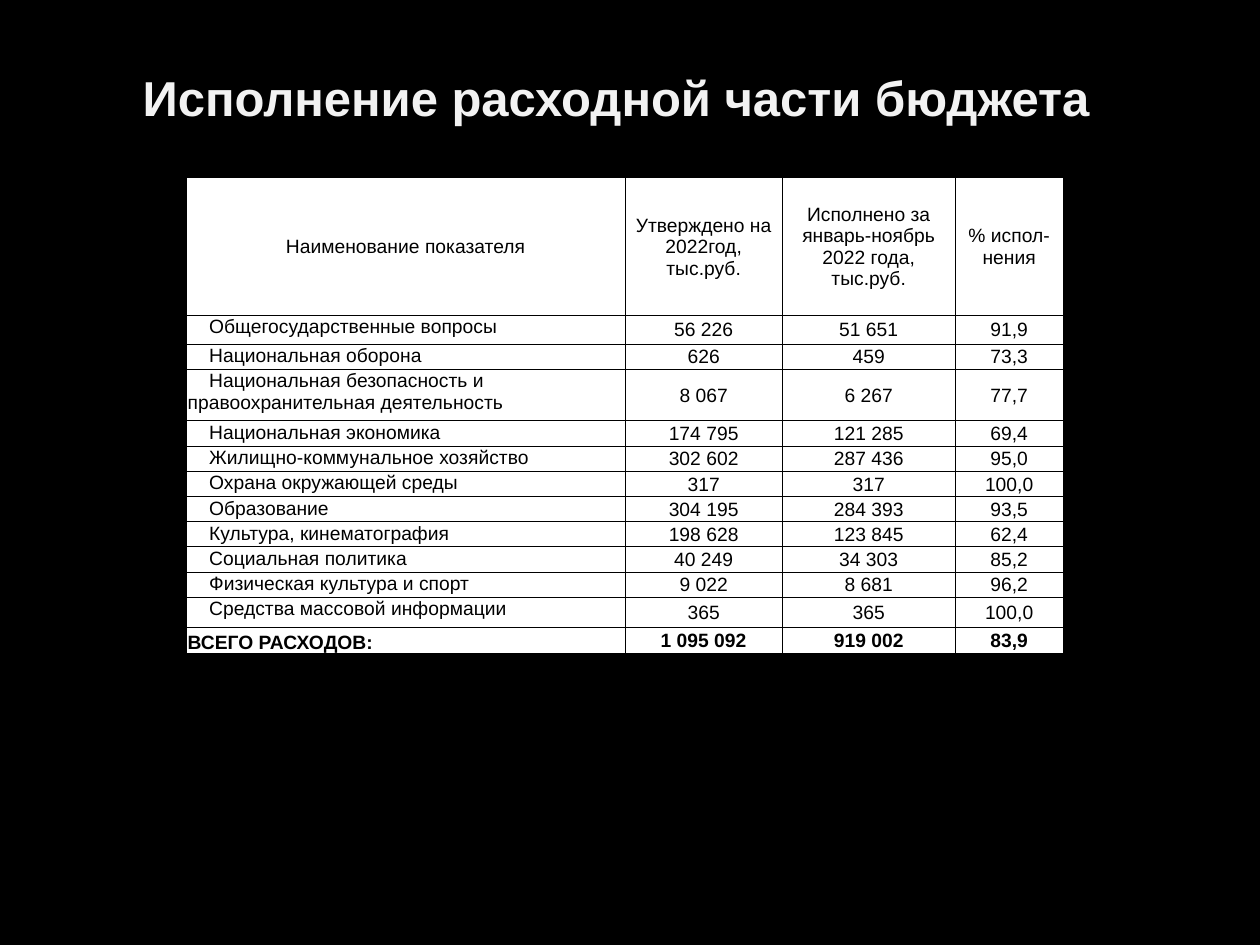
from lxml import etree
from pptx import Presentation
from pptx.dml.color import RGBColor
from pptx.enum import text
from pptx.oxml import ns
from pptx.util import Inches, Pt

BLACK = RGBColor(0x00, 0x00, 0x00)
WHITE = RGBColor(0xFF, 0xFF, 0xFF)
LIGHT_GRAY = RGBColor(0xF2, 0xF2, 0xF2)

COLUMN_WIDTHS = [3.48, 1.25, 1.37, 0.86]
ROW_HEIGHTS = [1.09, 0.23, 0.2, 0.41] + [0.2] * 7 + [0.24, 0.21]
ROWS = [
    ("Наименование показателя", "Утверждено на 2022год, тыс.руб.",
     "Исполнено за январь-ноябрь 2022 года, тыс.руб.", "% испол-нения"),
    ("Общегосударственные вопросы", "56 226", "51 651", "91,9"),
    ("Национальная оборона", "626", "459", "73,3"),
    ("Национальная безопасность и правоохранительная деятельность",
     "8 067", "6 267", "77,7"),
    ("Национальная экономика", "174 795", "121 285", "69,4"),
    ("Жилищно-коммунальное хозяйство", "302 602", "287 436", "95,0"),
    ("Охрана окружающей среды", "317", "317", "100,0"),
    ("Образование", "304 195", "284 393", "93,5"),
    ("Культура, кинематография", "198 628", "123 845", "62,4"),
    ("Социальная политика", "40 249", "34 303", "85,2"),
    ("Физическая культура и спорт", "9 022", "8 681", "96,2"),
    ("Средства массовой информации", "365", "365", "100,0"),
    ("ВСЕГО РАСХОДОВ:", "1 095 092", "919 002", "83,9"),
]


def style_paragraph(paragraph, size, color, bold, alignment):
    paragraph.font.name = "Arial"
    paragraph.font.size = Pt(size)
    paragraph.font.color.rgb = color
    paragraph.font.bold = bold
    paragraph.alignment = alignment


def add_borders(cell):
    properties = cell._tc.get_or_add_tcPr()
    for position, side in enumerate(("lnL", "lnR", "lnT", "lnB")):
        line = etree.Element(ns.qn(f"a:{side}"), w=str(Pt(0.5)))
        fill = etree.SubElement(line, ns.qn("a:solidFill"))
        etree.SubElement(fill, ns.qn("a:srgbClr"), val=str(BLACK))
        properties.insert(position, line)


presentation = Presentation()
presentation.slide_width = Inches(10)
presentation.slide_height = Inches(7.5)
slide = presentation.slides.add_slide(presentation.slide_layouts[6])
slide.background.fill.solid()
slide.background.fill.fore_color.rgb = BLACK

title = slide.shapes.add_textbox(Inches(0.5), Inches(0.29), Inches(9), Inches(0.96))
title_frame = title.text_frame
title_frame.word_wrap = True
title_frame.vertical_anchor = text.MSO_ANCHOR.MIDDLE
title_frame.margin_right = Inches(0.32)
title_frame.text = "Исполнение расходной части бюджета"
style_paragraph(title_frame.paragraphs[0], 28, LIGHT_GRAY, True, text.PP_ALIGN.CENTER)

table = slide.shapes.add_table(
    len(ROWS), len(COLUMN_WIDTHS), Inches(1.48), Inches(1.41),
    Inches(sum(COLUMN_WIDTHS)), Inches(sum(ROW_HEIGHTS))).table
for column, width in zip(table.columns, COLUMN_WIDTHS):
    column.width = Inches(width)
for row, height in zip(table.rows, ROW_HEIGHTS):
    row.height = Inches(height)

last_row = len(ROWS) - 1
for row_index, values in enumerate(ROWS):
    for column_index, value in enumerate(values):
        cell = table.cell(row_index, column_index)
        cell.text = value
        cell.fill.solid()
        cell.fill.fore_color.rgb = WHITE
        cell.margin_left = cell.margin_right = cell.margin_top = Inches(0.01)
        cell.margin_bottom = 0
        cell.vertical_anchor = text.MSO_ANCHOR.MIDDLE
        alignment = text.PP_ALIGN.CENTER
        paragraph = cell.text_frame.paragraphs[0]
        if column_index == 0 and row_index > 0:
            alignment = text.PP_ALIGN.LEFT
            if row_index == last_row:
                cell.vertical_anchor = text.MSO_ANCHOR.BOTTOM
            else:
                cell.vertical_anchor = text.MSO_ANCHOR.TOP
                paragraph._p.get_or_add_pPr().set("indent", str(Inches(0.17)))
        style_paragraph(paragraph, 11, BLACK, row_index == last_row, alignment)
        add_borders(cell)

presentation.save("out.pptx")
